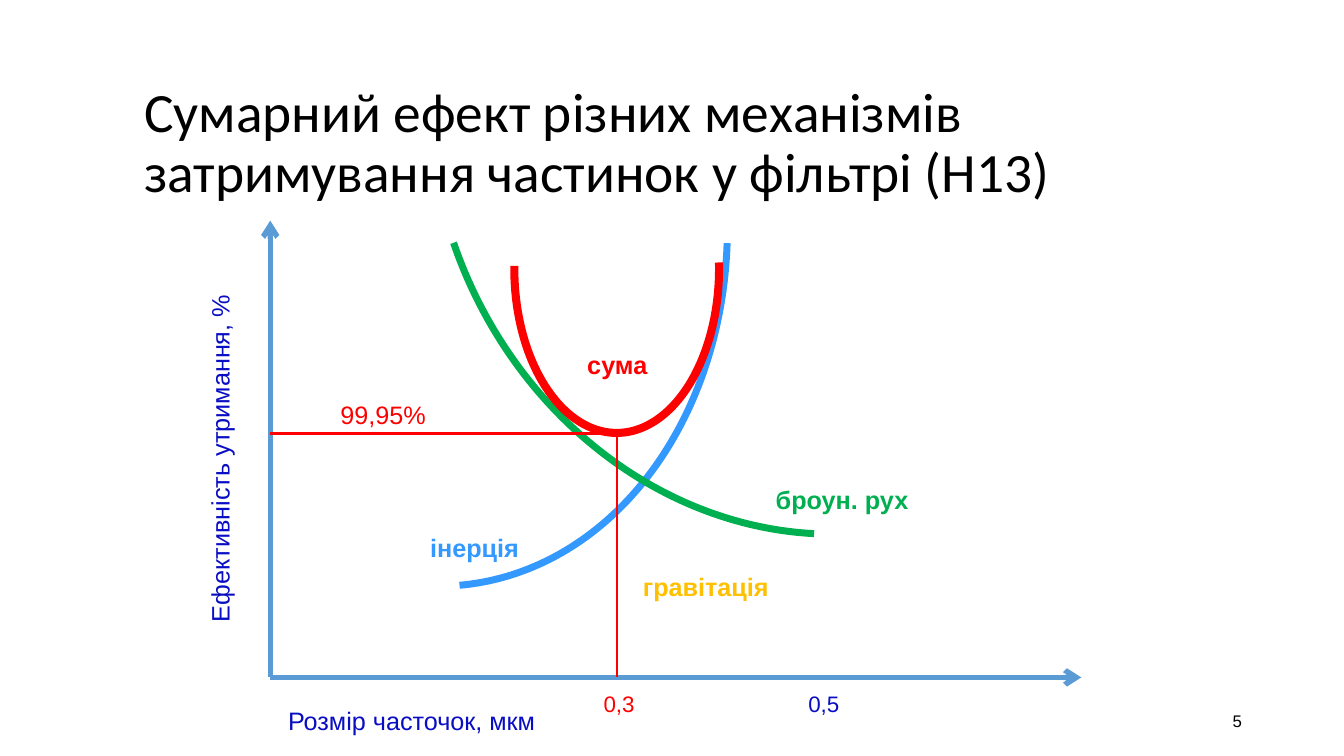
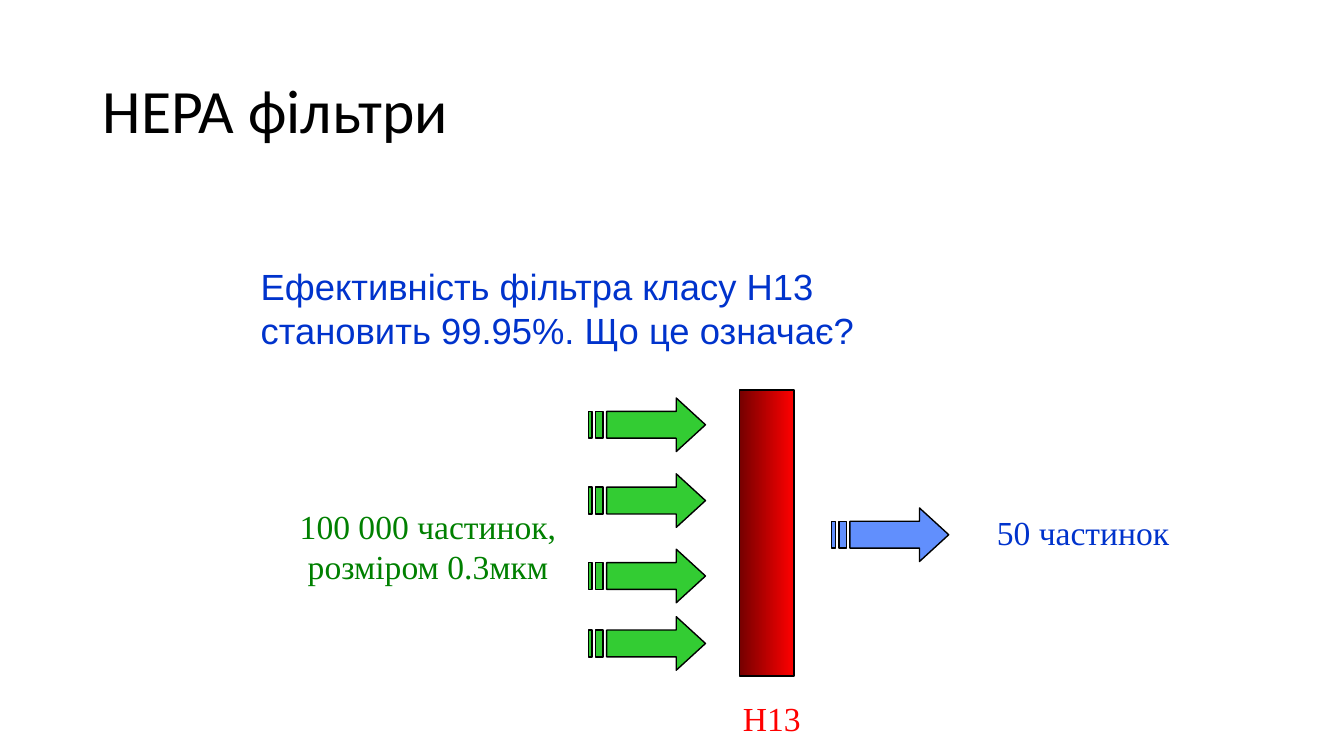
from dataclasses import dataclass

from lxml import etree
from pptx import Presentation
from pptx import util as u
from pptx.dml import color
from pptx.enum import shapes, text
from pptx.oxml import ns


@dataclass(frozen=True)
class Theme:
    # Colours
    black: str = "000000"
    axis: str = "5B9BD5"
    caption: str = "090DC3"
    inertia: str = "3399FF"
    brownian: str = "00B050"
    gravity: str = "FFC000"
    total: str = "FF0000"
    filter_dark: str = "760000"
    incoming: str = "33CC33"
    incoming_text: str = "008000"
    outgoing: str = "618FFD"
    outgoing_text: str = "0033CC"
    # Fonts
    heading: str = "Calibri"
    sans: str = "Arial"
    serif: str = "Times New Roman"
    # Type sizes
    long_title: float = 39.6
    title: int = 44
    question: int = 26
    particles: int = 24
    label: int = 18
    tick: int = 16
    footer: int = 12


THEME = Theme()


def apply(target, values):
    for name, value in values.items():
        setattr(target, name, value)


def lengths(*values):
    return [u.Cm(value) for value in values]


class Deck:
    """Holds the style and the current slide; lengths are centimetres."""

    def __init__(self, theme):
        self.theme = theme
        self.prs = Presentation()
        apply(self.prs, {"slide_width": u.Cm(33.87), "slide_height": u.Cm(19.05)})
        self.slide = None

    def new_slide(self, title, box, size):
        self.slide = self.prs.slides.add_slide(self.prs.slide_layouts[5])
        heading = self.slide.shapes.title
        apply(heading, dict(zip(("left", "top", "width", "height"), lengths(*box))))
        self.set_text(heading.text_frame, title, size, self.theme.black,
                      font=self.theme.heading, spacing=0.9,
                      frame_format={"auto_size": text.MSO_AUTO_SIZE.NONE, "word_wrap": True,
                                    "vertical_anchor": text.MSO_ANCHOR.MIDDLE})

    def set_text(self, frame, words, size, colour, font=None, bold=False,
                 align=text.PP_ALIGN.LEFT, spacing=None, frame_format=None):
        apply(frame, frame_format or {})
        frame.text = words
        for paragraph in frame.paragraphs:
            apply(paragraph, {"alignment": align, "line_spacing": spacing})
            for run in paragraph.runs:
                apply(run.font, {"size": u.Pt(size), "bold": bold,
                                 "name": font or self.theme.sans})
                run.font.color.rgb = color.RGBColor.from_string(colour)

    def label(self, words, box, size, colour, wrap=False, rotation=0,
              anchor=text.MSO_ANCHOR.TOP, **style):
        holder = self.slide.shapes.add_textbox(*lengths(*box))
        holder.rotation = rotation
        self.set_text(holder.text_frame, words, size, colour, **style,
                      frame_format={"word_wrap": wrap, "vertical_anchor": anchor,
                                    "auto_size": text.MSO_AUTO_SIZE.SHAPE_TO_FIT_TEXT})

    def outline(self, shape, colour, width):
        shape.line.color.rgb = color.RGBColor.from_string(colour)
        shape.line.width = u.Pt(width)

    def line(self, start, end, colour, width, arrow=False):
        link = self.slide.shapes.add_connector(
            shapes.MSO_CONNECTOR.STRAIGHT, *lengths(*start, *end))
        self.outline(link, colour, width)
        properties = link.element.spPr
        if arrow:
            etree.SubElement(properties.find(ns.qn("a:ln")), ns.qn("a:tailEnd"), type="arrow")
        etree.SubElement(properties, ns.qn("a:effectLst"))

    def arc(self, box, rotation, span, colour, width):
        curve = self.slide.shapes.add_shape(shapes.MSO_SHAPE.ARC, *lengths(*box))
        curve.adjustments[0], curve.adjustments[1] = span
        curve.rotation = rotation
        curve.shadow.inherit = False
        curve.fill.background()
        self.outline(curve, colour, width)

    def gradient_bar(self, box, colours):
        bar = self.slide.shapes.add_shape(shapes.MSO_SHAPE.RECTANGLE, *lengths(*box))
        bar.shadow.inherit = False
        bar.fill.gradient()
        bar.fill.gradient_angle = 0
        for stop, colour in zip(bar.fill.gradient_stops, colours):
            stop.color.rgb = color.RGBColor.from_string(colour)
        self.outline(bar, self.theme.black, 1)

    def striped_arrow(self, left, top, colour, width=2.95, height=1.35):
        # Contours as fractions of the arrow's width and height
        head = [(3/4, 0), (3/4, 1/4), (5/32, 1/4), (5/32, 3/4), (3/4, 3/4), (3/4, 1), (1, 1/2)]
        stripes = [[(a, 1/4), (a, 3/4), (b, 3/4), (b, 1/4)]
                   for a, b in ((1/16, 1/8), (0, 1/32))]
        builder = None
        for contour in (head, *stripes):
            first, *rest = [lengths(left + x * width, top + y * height) for x, y in contour]
            if builder is None:
                builder = self.slide.shapes.build_freeform(*first)
            else:
                builder.move_to(*first)
            builder.add_line_segments(rest, close=True)
        arrow = builder.convert_to_shape()
        arrow.shadow.inherit = False
        arrow.fill.solid()
        arrow.fill.fore_color.rgb = color.RGBColor.from_string(colour)
        self.outline(arrow, self.theme.black, 1)


def capture_effect(deck):
    t = deck.theme
    deck.new_slide("Сумарний ефект різних механізмів затримування частинок у фільтрі (Н13)",
                   (3.38, 1.83, 27.66, 3.61), t.long_title)
    deck.label("5", (23.93, 17.65, 7.62, 1.02), t.footer, t.black, wrap=True,
               anchor=text.MSO_ANCHOR.MIDDLE, align=text.PP_ALIGN.RIGHT)

    # Axes
    origin_x, origin_y = origin = (6.81, 17.07)
    for axis_end in ((27.25, origin_y), (origin_x, 5.56)):
        deck.line(origin, axis_end, t.axis, 3.75, arrow=True)

    # Efficiency curves
    deck.arc((1.35, -2.18, 18.82, 15.11), 85, (168.41, 0), t.inertia, 5)
    deck.arc((10.92, -7.44, 18.82, 21.01), 161, (172.79, 0.04), t.brownian, 5)
    deck.arc((11.4, 4.19, 8.28, 5.16), 90, (159.94, 54.92), t.total, 5.75)

    # Curve names
    for name, left, top, width, colour in (
            ("інерція", 10.59, 13.28, 2.77, t.inertia),
            ("гравітація", 15.95, 14.27, 3.73, t.gravity),
            ("броун. рух", 19.3, 12.07, 3.89, t.brownian),
            ("сума", 14.55, 8.69, 2.03, t.total)):
        deck.label(name, (left, top, width, 1.02), t.label, colour, bold=True)

    # Axis captions
    deck.label("Ефективність утримання, %", (1.04, 10.92, 8.99, 1.02), t.label,
               t.caption, rotation=270)
    deck.label("Розмір часточок, мкм", (7.01, 17.65, 6.81, 1.02), t.label, t.caption)

    # Lowest point and its readings
    lowest_x, lowest_y = lowest = (15.54, 10.92)
    deck.line(lowest, (lowest_x, origin_y), t.total, 1.5)
    deck.line(lowest, (origin_x, lowest_y), t.total, 1.75)
    deck.label("0,3", (14.96, 17.27, 1.3, 0.94), t.tick, t.total)
    deck.label("0,5", (20.12, 17.27, 1.37, 0.94), t.tick, t.caption)
    deck.label("99,95%", (8.33, 9.93, 2.69, 1.02), t.label, t.total)


def hepa_filters(deck):
    t = deck.theme
    deck.new_slide("HEPA фільтри", (2.34, 1.02, 29.21, 3.68), t.title)

    # Filter with the particles before and after it
    deck.gradient_bar((18.64, 9.83, 1.37, 7.21), (t.filter_dark, t.total))
    deck.striped_arrow(20.96, 12.8, t.outgoing)
    for top in (10.03, 11.94, 13.84, 15.54):
        deck.striped_arrow(14.83, top, t.incoming)

    # Particle counts and filter class
    deck.label("100 000 частинок,\nрозміром 0.3мкм", (6.99, 12.62, 7.59, 2.31), t.particles,
               t.incoming_text, wrap=True, font=t.serif, align=text.PP_ALIGN.CENTER)
    deck.label("50 частинок", (24.87, 12.78, 4.9, 1.3), t.particles,
               t.outgoing_text, font=t.serif)
    deck.label("Н13", (18.47, 17.45, 1.98, 1.3), t.particles, t.total, font=t.serif)

    # Question
    deck.label("Ефективність фільтра класу Н13 становить 99.95%. Що це означає?",
               (6.32, 6.53, 16.94, 2.49), t.question, t.outgoing_text, wrap=True)


def main():
    deck = Deck(THEME)
    capture_effect(deck)
    hepa_filters(deck)
    deck.prs.save("out.pptx")


if __name__ == "__main__":
    main()
